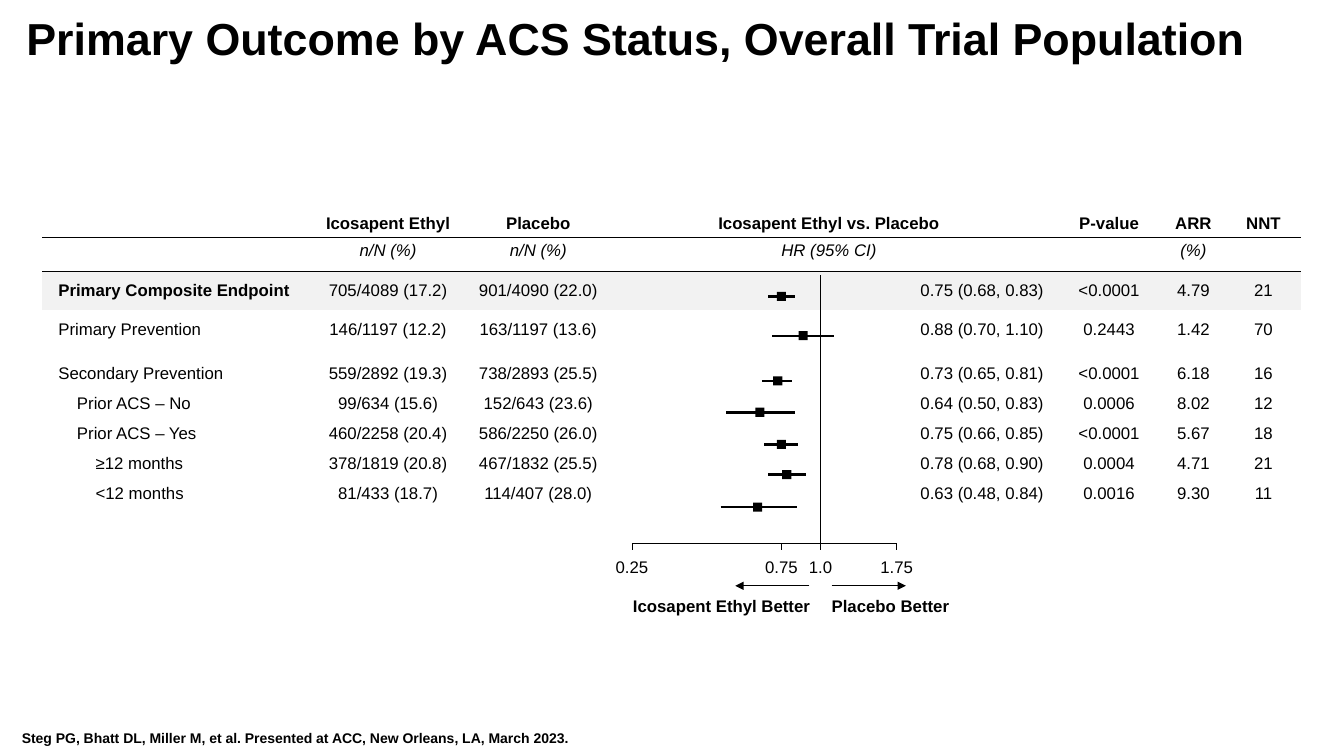
"""Build a forest-plot slide of the primary outcome by ACS status."""
from math import log

from lxml.etree import SubElement
from pptx import Presentation
from pptx.dml.color import RGBColor
from pptx.enum.shapes import MSO_CONNECTOR, MSO_SHAPE
from pptx.enum.text import MSO_ANCHOR, MSO_AUTO_SIZE, PP_ALIGN
from pptx.oxml.ns import qn
from pptx.util import Cm, Pt

BLACK = RGBColor(0x00, 0x00, 0x00)
BAND = RGBColor(0xF2, 0xF2, 0xF2)
FONT = "Arial"
PLAIN_TABLE = "{2D5ABB26-0587-4C30-8999-92F81FD0307C}"

TABLE_LEFT, TABLE_TOP = 1.07, 4.78
COLUMN_WIDTHS = [6.78, 3.86, 3.71, 7.44, 3.78, 2.62, 1.63, 1.9]
ROW_HEIGHTS = [1.21, 0.85, 0.97, 5.93]
ROW_MARGINS = [0.13, 0.1, 0.13, 0.25]
ROW_ANCHORS = [MSO_ANCHOR.BOTTOM, MSO_ANCHOR.TOP, MSO_ANCHOR.MIDDLE, MSO_ANCHOR.TOP]
PLOT_COLUMN = 3
SIDE_MARGIN = 0.25
LABEL_INDENT, LEVEL_INDENT = 0.15, 0.47

HEADINGS = ["", "Icosapent Ethyl", "Placebo", "Icosapent Ethyl vs. Placebo", "",
            "P-value", "ARR", "NNT"]
UNITS = ["", "n/N (%)", "n/N (%)", "HR (95% CI)", "", "", "(%)", ""]
OVERALL = ["Primary Composite Endpoint", "705/4089 (17.2)", "901/4090 (22.0)", "",
           "0.75 (0.68, 0.83)", "<0.0001", "4.79", "21"]
SUBGROUPS = [
    ["Primary Prevention", "146/1197 (12.2)", "163/1197 (13.6)", "",
     "0.88 (0.70, 1.10)", "0.2443", "1.42", "70"],
    ["Secondary Prevention", "559/2892 (19.3)", "738/2893 (25.5)", "",
     "0.73 (0.65, 0.81)", "<0.0001", "6.18", "16"],
    ["Prior ACS – No", "99/634 (15.6)", "152/643 (23.6)", "",
     "0.64 (0.50, 0.83)", "0.0006", "8.02", "12"],
    ["Prior ACS – Yes", "460/2258 (20.4)", "586/2250 (26.0)", "",
     "0.75 (0.66, 0.85)", "<0.0001", "5.67", "18"],
    ["≥12 months", "378/1819 (20.8)", "467/1832 (25.5)", "",
     "0.78 (0.68, 0.90)", "0.0004", "4.71", "21"],
    ["<12 months", "81/433 (18.7)", "114/407 (28.0)", "",
     "0.63 (0.48, 0.84)", "0.0016", "9.30", "11"],
]
SUBGROUP_LEVELS = [0, 0, 1, 1, 2, 2]
SUBGROUP_SPACING = [0, 18, 8, 8, 8, 8]

HAZARD_RATIOS = [
    (0.75, 0.68, 0.83, 7.47), (0.88, 0.70, 1.10, 8.46), (0.73, 0.65, 0.81, 9.6),
    (0.64, 0.50, 0.83, 10.39), (0.75, 0.66, 0.85, 11.2), (0.78, 0.68, 0.90, 11.96),
    (0.63, 0.48, 0.84, 12.78),
]
TICKS = ["0.25", "0.75", "1.0", "1.75"]
UNITY_X, LOG_SCALE = 20.68, 3.43
REFERENCE_TOP, AXIS_Y, TICK_LENGTH = 6.93, 13.7, 0.15
MARKER_SIZE = 0.23
ARROW_Y, ARROW_GAP, ARROW_LENGTH = 14.76, 0.28, 1.87


def ratio_x(ratio):
    """Return the horizontal place in centimetres of a ratio on the log axis."""
    return UNITY_X + LOG_SCALE * log(ratio)


def add_span(para, text, size=12, bold=False, italic=False):
    """Add one formatted run to a paragraph."""
    span = para.add_run()
    span.text = text
    span.font.name, span.font.size = FONT, Pt(size)
    span.font.bold, span.font.italic = bold, italic
    span.font.color.rgb = BLACK


def add_text(page, text, left, top, width, height, margins=(0, 0),
             align=PP_ALIGN.LEFT, anchor=MSO_ANCHOR.TOP, size=12, bold=True):
    """Add a text box with one line of text."""
    box = page.shapes.add_textbox(Cm(left), Cm(top), Cm(width), Cm(height))
    frame = box.text_frame
    frame.word_wrap = True
    frame.vertical_anchor = anchor
    frame.margin_left = frame.margin_right = Cm(margins[0])
    frame.margin_top = frame.margin_bottom = Cm(margins[1])
    frame.paragraphs[0].alignment = align
    add_span(frame.paragraphs[0], text, size, bold)


def add_line(page, start, end, weight, arrow=False):
    """Add a straight black line, with an arrowhead at its end if asked."""
    line = page.shapes.add_connector(MSO_CONNECTOR.STRAIGHT, *map(Cm, start + end))
    line.line.color.rgb = BLACK
    line.line.width = Pt(weight)
    properties = line._element.spPr
    if arrow:
        SubElement(properties.find(qn("a:ln")), qn("a:tailEnd"), type="triangle")
    SubElement(properties, qn("a:effectLst"))


def add_title(page, text):
    """Place and format the title placeholder."""
    title = page.shapes.title
    title.left, title.top, title.width, title.height = Cm(0.41), Cm(0.3), Cm(32.6), Cm(1.78)
    frame = title.text_frame
    frame.word_wrap = True
    frame.auto_size = MSO_AUTO_SIZE.NONE
    frame.vertical_anchor = MSO_ANCHOR.TOP
    para = frame.paragraphs[0]
    para.alignment = PP_ALIGN.LEFT
    para.line_spacing = 0.9
    add_span(para, text, 32, bold=True)


def write_cell(cell, column, texts, levels=(0,), spacing=(0,), bold=False, italic=False):
    """Write one paragraph for each text into a table cell."""
    frame = cell.text_frame
    for index, (text, level, space) in enumerate(zip(texts, levels, spacing)):
        para = frame.add_paragraph() if index else frame.paragraphs[0]
        para.alignment = PP_ALIGN.CENTER if column else PP_ALIGN.LEFT
        para.space_before = Pt(space)
        if text:
            add_span(para, text, 12, bold, italic)
        else:
            SubElement(para._p, qn("a:endParaRPr"), sz="1200")
        if column == 0:
            indent = Cm(LABEL_INDENT + level * LEVEL_INDENT)
            para._p.get_or_add_pPr().set("marL", str(int(indent)))


def format_cell(cell, row, column):
    """Set the margins, fill and rule of a table cell."""
    cell.vertical_anchor = ROW_ANCHORS[row]
    cell.margin_top = cell.margin_bottom = Cm(ROW_MARGINS[row])
    cell.margin_left = cell.margin_right = Cm(SIDE_MARGIN)
    if row == 2:
        cell.fill.solid()
        cell.fill.fore_color.rgb = BAND
    else:
        cell.fill.background()
    if row < 2:
        if column == PLOT_COLUMN:
            cell.margin_left, cell.margin_right = Cm(0.05), Cm(0.33)
        properties = cell._tc.get_or_add_tcPr()
        rule = SubElement(properties, qn("a:lnB"), w=str(int(Pt(1))))
        colour = SubElement(SubElement(rule, qn("a:solidFill")), qn("a:srgbClr"))
        colour.set("val", str(BLACK))
        properties.insert(0, rule)


def add_results_table(page):
    """Add the table of event counts, ratios and P-values."""
    table = page.shapes.add_table(
        len(ROW_HEIGHTS), len(COLUMN_WIDTHS), Cm(TABLE_LEFT), Cm(TABLE_TOP),
        Cm(sum(COLUMN_WIDTHS)), Cm(sum(ROW_HEIGHTS))).table
    table.first_row = table.horz_banding = False
    table._tbl.tblPr.find(qn("a:tableStyleId")).text = PLAIN_TABLE
    for column, width in zip(table.columns, COLUMN_WIDTHS):
        column.width = Cm(width)
    for row, height in zip(table.rows, ROW_HEIGHTS):
        row.height = Cm(height)
    for row in (0, 1):
        table.cell(row, PLOT_COLUMN).merge(table.cell(row, PLOT_COLUMN + 1))
    for column, subgroup_texts in enumerate(zip(*SUBGROUPS)):
        cells = [table.cell(row, column) for row in range(len(ROW_HEIGHTS))]
        write_cell(cells[0], column, [HEADINGS[column]], bold=True)
        write_cell(cells[1], column, [UNITS[column]], italic=True)
        write_cell(cells[2], column, [OVERALL[column]], bold=column == 0)
        texts = [""] if column == PLOT_COLUMN else subgroup_texts
        write_cell(cells[3], column, texts, SUBGROUP_LEVELS, SUBGROUP_SPACING)
        for row, cell in enumerate(cells):
            format_cell(cell, row, column)


def add_ratio(page, ratio, low, high, y):
    """Add one confidence interval with its square marker."""
    add_line(page, (ratio_x(low), y), (ratio_x(high), y), 1.75)
    half = MARKER_SIZE / 2
    marker = page.shapes.add_shape(MSO_SHAPE.RECTANGLE, Cm(ratio_x(ratio) - half),
                                   Cm(y - half), Cm(MARKER_SIZE), Cm(MARKER_SIZE))
    marker.shadow.inherit = False
    marker.fill.solid()
    marker.fill.fore_color.rgb = BLACK
    marker.line.fill.background()


def add_axis(page):
    """Add the reference line, the log axis and the direction arrows."""
    add_line(page, (UNITY_X, REFERENCE_TOP), (UNITY_X, AXIS_Y), 0.5)
    first, last = ratio_x(float(TICKS[0])), ratio_x(float(TICKS[-1]))
    add_line(page, (first, AXIS_Y), (last, AXIS_Y), 0.5)
    for tick in TICKS:
        x = ratio_x(float(tick))
        add_line(page, (x, AXIS_Y), (x, AXIS_Y + TICK_LENGTH), 0.5)
        add_text(page, tick, x - 0.49, 13.97, 0.98, 0.56, (0, 0.05),
                 PP_ALIGN.CENTER, bold=False)
    for side in (-1, 1):
        start = UNITY_X + side * ARROW_GAP
        add_line(page, (start, ARROW_Y), (start + side * ARROW_LENGTH, ARROW_Y), 1, True)
    add_text(page, "Icosapent Ethyl Better", 15.12, 15.01, 5.3, 0.51, align=PP_ALIGN.RIGHT)
    add_text(page, "Placebo Better", 20.96, 15.01, 3.5, 0.51)


def main():
    """Build and save the slide."""
    deck = Presentation()
    deck.slide_width, deck.slide_height = Cm(33.87), Cm(19.05)
    page = deck.slides.add_slide(deck.slide_layouts[5])
    add_title(page, "Primary Outcome by ACS Status, Overall Trial Population")
    add_results_table(page)
    for estimate in HAZARD_RATIOS:
        add_ratio(page, *estimate)
    add_axis(page)
    add_text(page, "Steg PG, Bhatt DL, Miller M, et al. Presented at ACC, "
             "New Orleans, LA, March 2023.", 0.3, 18.24, 18.06, 0.69, (0.25, 0.13),
             anchor=MSO_ANCHOR.BOTTOM, size=10)
    deck.save("out.pptx")


if __name__ == "__main__":
    main()
